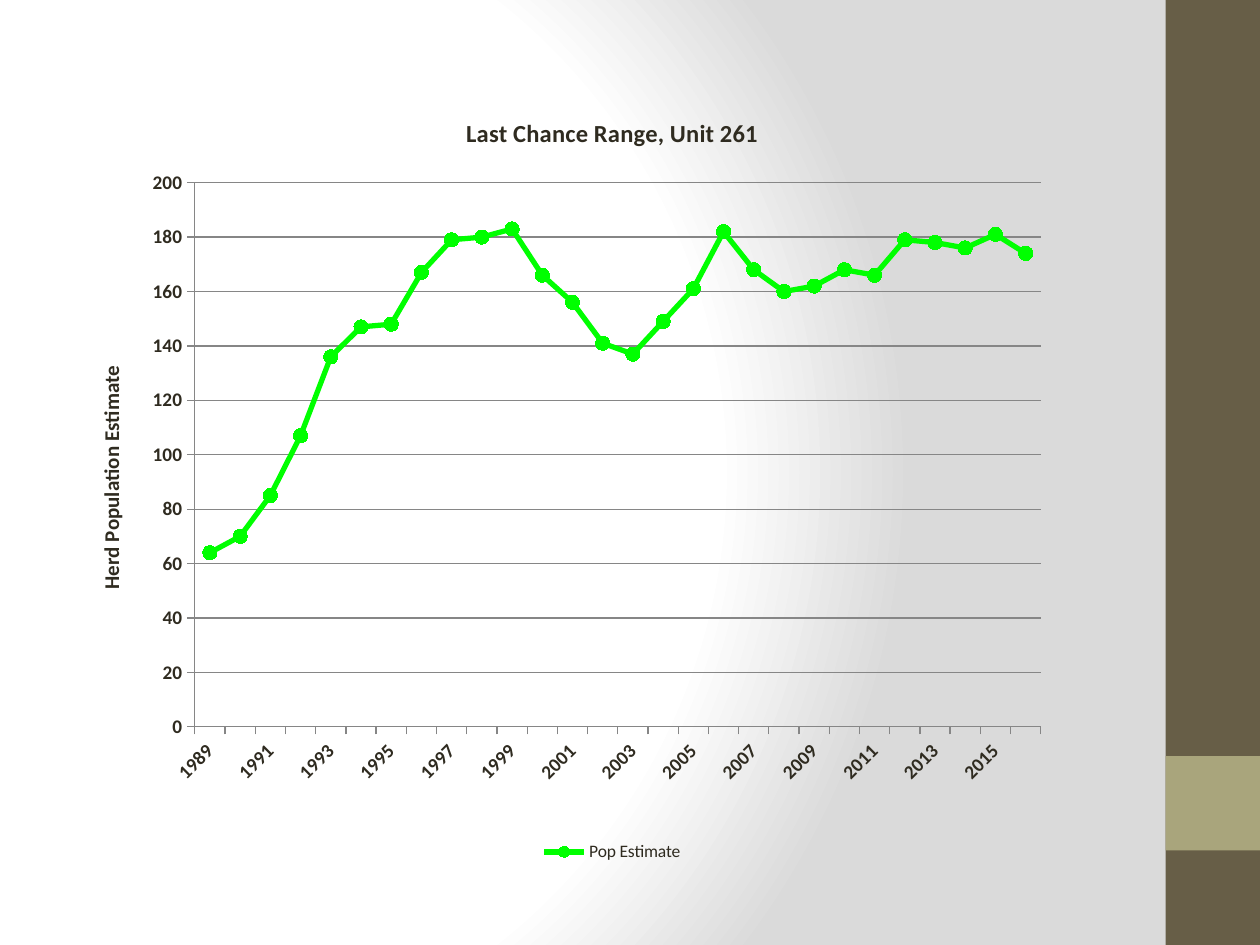
from dataclasses import dataclass

from lxml import etree
from pptx import Presentation
from pptx import util as u
from pptx.chart.data import CategoryChartData
from pptx.dml.color import RGBColor
from pptx.enum import chart as ch, shapes
from pptx.oxml import parse_xml
from pptx.oxml.ns import qn

NS_A = "http://schemas.openxmlformats.org/drawingml/2006/main"
NS_C = "http://schemas.openxmlformats.org/drawingml/2006/chart"

FIRST_YEAR = 1989
POPULATION = [64, 70, 85, 107, 136, 147, 148, 167, 179, 180, 183, 166, 156, 141,
              137, 149, 161, 182, 168, 160, 162, 168, 166, 179, 178, 176, 181, 174]


@dataclass(frozen=True)
class Theme:
    font: str = "Calibri"
    ink: str = "2F2B20"
    band: str = "675E47"
    accent: str = "A9A57C"
    grid: str = "868686"
    series: str = "00FF00"
    bg_stops: tuple = ((0, "FFFFFF"), (75, "FFFFFF"), (100, "DADADA"))
    title_size: int = 14
    axis_title_size: int = 12
    tick_size: int = 11
    legend_size: int = 10


class SlideBuilder:
    def __init__(self, prs, theme):
        self.theme = theme
        self.slide = prs.slides.add_slide(prs.slide_layouts[6])

    def background(self):
        """Radial gradient centred towards the left edge."""
        fill = self.slide.background.fill
        fill.gradient()
        stops = "".join(
            f'<a:gs pos="{pos * 1000}"><a:srgbClr val="{color}"/></a:gs>'
            for pos, color in self.theme.bg_stops)
        grad = parse_xml(
            f'<a:gradFill xmlns:a="{NS_A}" rotWithShape="1"><a:gsLst>{stops}</a:gsLst>'
            '<a:path path="circle"><a:fillToRect l="20000" t="50000" r="100000" b="50000"/>'
            '</a:path></a:gradFill>')
        old = next(self.slide.element.iter(qn("a:gradFill")))
        old.getparent().replace(old, grad)

    def block(self, left, top, width, height, color):
        sp = self.slide.shapes.add_shape(
            shapes.MSO_SHAPE.RECTANGLE, *map(u.Inches, (left, top, width, height)))
        sp.shadow.inherit = False
        sp.fill.solid()
        sp.fill.fore_color.rgb = RGBColor.from_string(color)
        sp.line.fill.background()

    def style_font(self, font, size, bold=True):
        font.name = self.theme.font
        font.size = u.Pt(size)
        font.bold = bold
        font.color.rgb = RGBColor.from_string(self.theme.ink)

    def style_line(self, line, color, width):
        line.color.rgb = RGBColor.from_string(color)
        line.width = u.Pt(width)

    def chart_text(self, tf, words, size):
        tf.text = words
        self.style_font(tf.paragraphs[0].runs[0].font, size)

    def line_chart(self, box, title, axis_title, name, categories, values, plot):
        data = CategoryChartData(number_format="0")
        data.categories = categories
        data.add_series(name, values)
        chart = self.slide.shapes.add_chart(
            ch.XL_CHART_TYPE.LINE_MARKERS, *map(u.Inches, box), data).chart
        self.style_font(chart.font, self.theme.legend_size, bold=False)
        chart.has_title = True
        self.chart_text(chart.chart_title.text_frame, title, self.theme.title_size)
        chart.chart_title.include_in_layout = False
        chart.has_legend = True
        chart.legend.position = ch.XL_LEGEND_POSITION.BOTTOM
        chart.legend.include_in_layout = False
        self.style_font(chart.legend.font, self.theme.legend_size, bold=False)
        self.style_axes(chart, axis_title)
        self.style_series(chart.plots[0])
        self.place_plot(chart, plot)

    def style_axes(self, chart, axis_title):
        category, value = chart.category_axis, chart.value_axis
        for axis in (category, value):
            axis.major_tick_mark = ch.XL_TICK_MARK.OUTSIDE
            axis.minor_tick_mark = ch.XL_TICK_MARK.NONE
            self.style_font(axis.tick_labels.font, self.theme.tick_size)
            axis.tick_labels.number_format = "0"
            axis.tick_labels.number_format_is_linked = False
            self.style_line(axis.format.line, self.theme.grid, 0.75)
        value.minimum_scale, value.maximum_scale, value.major_unit = 0, 200, 20
        value.has_major_gridlines = True
        self.style_line(value.major_gridlines.format.line, self.theme.grid, 0.75)
        self.chart_text(value.axis_title.text_frame, axis_title, self.theme.axis_title_size)
        body = value.axis_title.text_frame._txBody.find(qn("a:bodyPr"))
        body.set("rot", "-5400000")
        body.set("vert", "horz")

        # Slanted labels on every second year, a tick on every year
        cat_xml = category._element
        cat_xml.find(f"{qn('c:txPr')}/{qn('a:bodyPr')}").set("rot", "-2700000")
        last = cat_xml.find(qn("c:noMultiLvlLbl"))
        for tag, step in (("tickLblSkip", 2), ("tickMarkSkip", 1)):
            skip = etree.Element(f"{{{NS_C}}}{tag}", val=str(step))
            last.addprevious(skip)

    def style_series(self, plot):
        plot.vary_by_categories = False
        series = plot.series[0]
        series.smooth = False
        self.style_line(series.format.line, self.theme.series, 3)
        marker = series.marker
        marker.style = ch.XL_MARKER_STYLE.CIRCLE
        marker.size = 8
        marker.format.fill.solid()
        marker.format.fill.fore_color.rgb = RGBColor.from_string(self.theme.series)
        self.style_line(marker.format.line, self.theme.series, 0.75)

    def place_plot(self, chart, plot):
        """Fix the inner plot area, given as fractions of the chart."""
        area = next(chart.element.iter(qn("c:plotArea")))
        for old in area.findall(qn("c:layout")):
            area.remove(old)
        sizes = "".join(f'<c:{tag} val="{val}"/>' for tag, val in zip("xywh", plot))
        area.insert(0, parse_xml(
            f'<c:layout xmlns:c="{NS_C}"><c:manualLayout><c:layoutTarget val="inner"/>'
            f'<c:xMode val="edge"/><c:yMode val="edge"/>{sizes}'
            '</c:manualLayout></c:layout>'))


def main():
    prs = Presentation()
    prs.slide_width, prs.slide_height = u.Inches(10), u.Inches(7.5)
    theme = Theme()
    s = SlideBuilder(prs, theme)
    s.background()
    s.block(9.25, 0, 0.75, 7.5, theme.band)
    s.block(9.25, 6, 0.75, 0.75, theme.accent)
    s.line_chart(
        box=(0.5, 0.71, 8.72, 6.17),
        title="Last Chance Range, Unit 261",
        axis_title="Herd Population Estimate",
        name="Pop Estimate",
        categories=range(FIRST_YEAR, FIRST_YEAR + len(POPULATION)),
        values=POPULATION,
        plot=(0.12, 0.12, 0.77, 0.7))
    prs.save("out.pptx")


if __name__ == "__main__":
    main()
